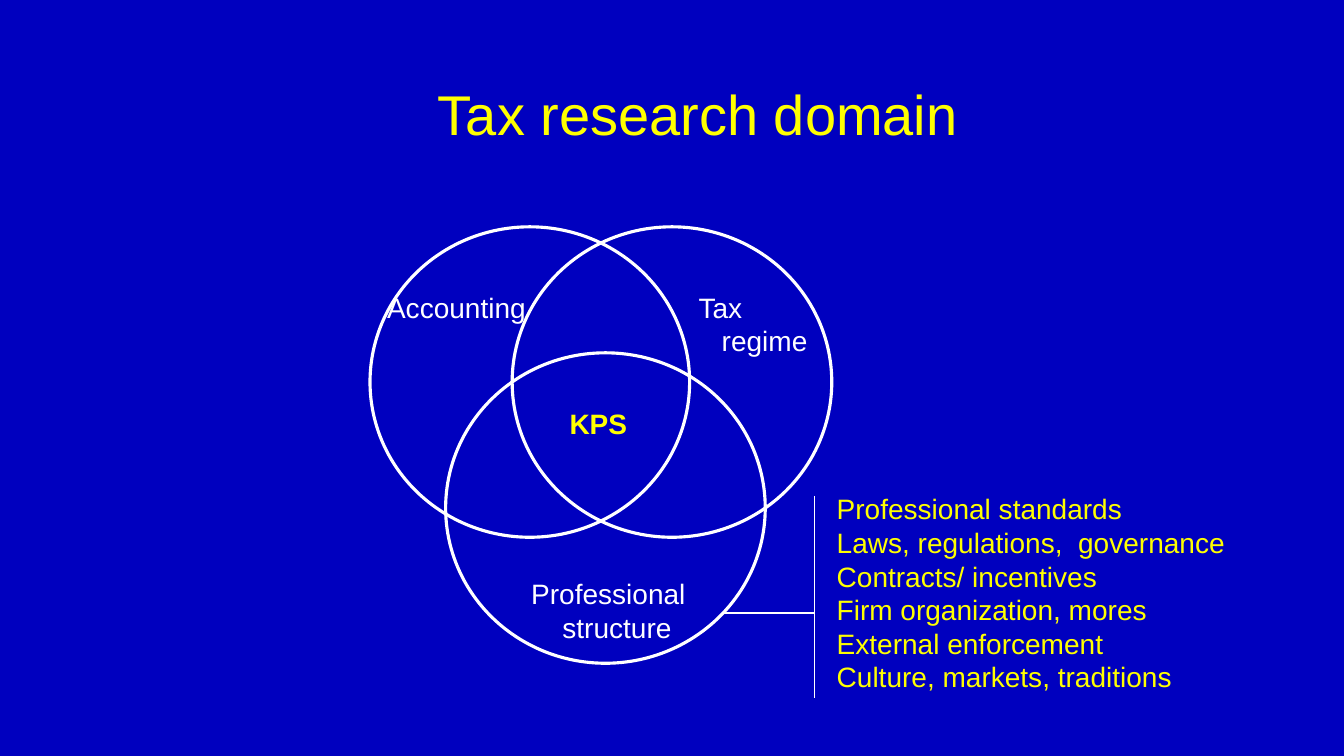
from pptx import Presentation
from pptx.dml.color import RGBColor
from pptx.enum.shapes import MSO_CONNECTOR, MSO_SHAPE
from pptx.enum.text import MSO_ANCHOR, PP_ALIGN
from pptx.oxml.ns import qn
from pptx.util import Inches, Pt
from lxml import etree

BLUE = RGBColor(0x00, 0x00, 0xBF)
YELLOW = RGBColor(0xFF, 0xFF, 0x00)
WHITE = RGBColor(0xFF, 0xFF, 0xFF)
FONT = "Arial"

TITLE = "Tax research domain"
CIRCLE_SIZE = (3.17, 3.08)
CIRCLE_CORNERS = [(3.67, 2.25), (4.42, 3.5), (5.08, 2.25)]

# (left, top, width, height), colour, bold, [(line, indent in inches)]
LABELS = [
    ((8.2, 4.83, 4.08, 2.46), YELLOW, False, [
        ("Professional standards", 0),
        ("Laws, regulations,  governance", 0),
        ("Contracts/ incentives", 0),
        ("Firm organization, mores", 0),
        ("External enforcement", 0),
        ("Culture, markets, traditions", 0),
    ]),
    ((3.74, 2.83, 1.65, 0.44), WHITE, False, [("Accounting", 0)]),
    ((6.75, 2.83, 1.4, 0.77), WHITE, False, [("Tax", 0.08), ("regime", 0.31)]),
    ((5.17, 5.67, 1.82, 0.77), WHITE, False,
     [("Professional", 0), ("structure", 0.31)]),
    ((5.55, 3.98, 0.82, 0.77), YELLOW, True, [("KPS", 0)]),
]

# Bracket joining the lower circle to its list: (start, end)
BRACKET = [((7.17, 6.08), (8.08, 6.08)), ((8.08, 4.92), (8.08, 6.92))]


def style(paragraph, size, color, bold=False):
    font = paragraph.font
    font.name, font.size, font.bold = FONT, Pt(size), bold
    font.color.rgb = color


def add_circle(slide, left, top):
    circle = slide.shapes.add_shape(
        MSO_SHAPE.OVAL, *map(Inches, (left, top, *CIRCLE_SIZE)))
    circle.shadow.inherit = False
    circle.fill.background()
    circle.line.color.rgb = WHITE
    circle.line.width = Pt(2.25)


def add_label(slide, box, color, bold, lines):
    frame = slide.shapes.add_textbox(*map(Inches, box)).text_frame
    frame.word_wrap = True
    frame.text = "\n".join(text for text, _ in lines)
    for paragraph, (_, indent) in zip(frame.paragraphs, lines):
        style(paragraph, 20, color, bold)
        if indent:
            properties = paragraph._p.get_or_add_pPr()
            properties.set("marL", str(Inches(indent)))
            properties.set("indent", "0")


def add_line(slide, start, end):
    line = slide.shapes.add_connector(
        MSO_CONNECTOR.STRAIGHT, *map(Inches, start + end))
    line.line.color.rgb = WHITE
    line.line.width = Pt(1)
    etree.SubElement(line._element.spPr, qn("a:effectLst"))


def main():
    prs = Presentation()
    prs.slide_width, prs.slide_height = Inches(13.33), Inches(7.5)
    slide = prs.slides.add_slide(prs.slide_layouts[5])
    slide.background.fill.solid()
    slide.background.fill.fore_color.rgb = BLUE

    title = slide.shapes.title
    title.left, title.top = Inches(2.67), Inches(0.5)
    title.width, title.height = Inches(8.5), Inches(1.25)
    title.text_frame.text = TITLE
    title.text_frame.vertical_anchor = MSO_ANCHOR.MIDDLE
    heading = title.text_frame.paragraphs[0]
    heading.alignment = PP_ALIGN.CENTER
    style(heading, 40, YELLOW)

    for corner in CIRCLE_CORNERS:
        add_circle(slide, *corner)
    for label in LABELS:
        add_label(slide, *label)
    for ends in BRACKET:
        add_line(slide, *ends)

    prs.save("out.pptx")


if __name__ == "__main__":
    main()
